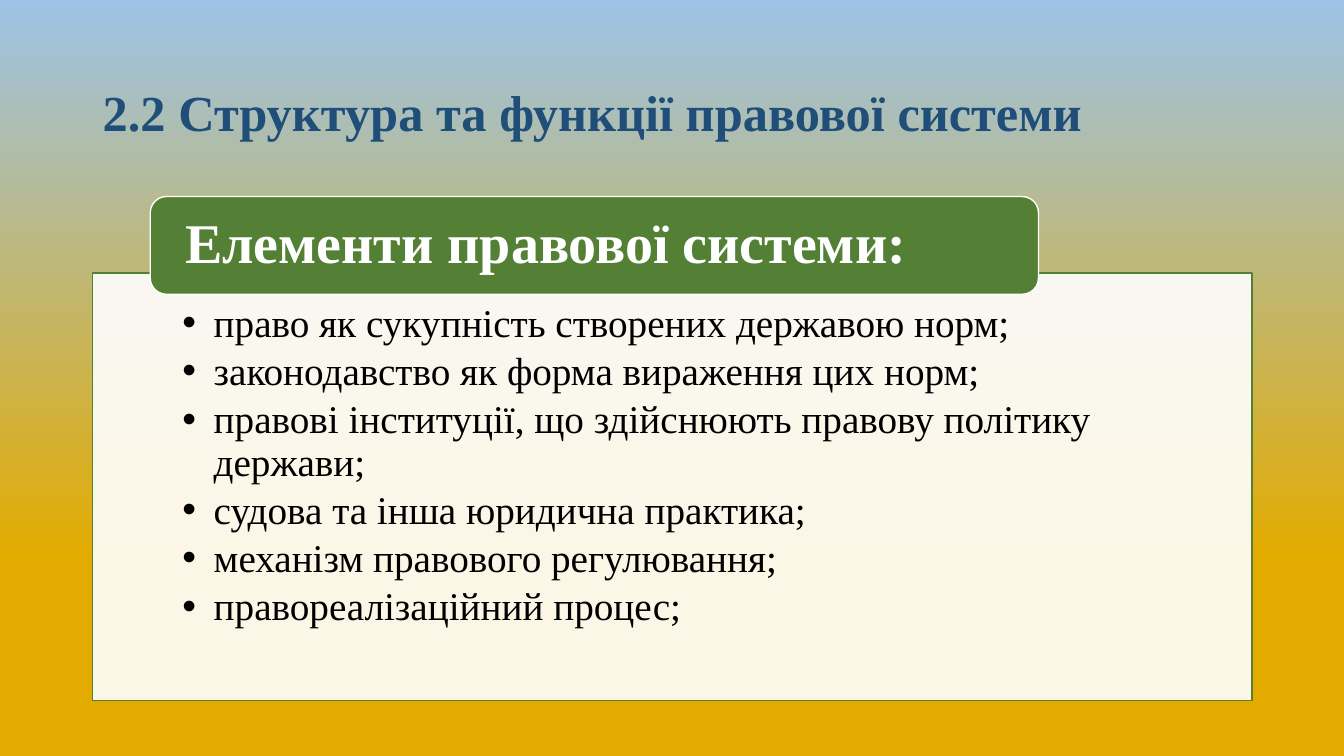
from lxml import etree
from pptx import Presentation
from pptx.dml.color import RGBColor
from pptx.enum.shapes import MSO_SHAPE
from pptx.enum.text import MSO_ANCHOR, PP_ALIGN
from pptx.oxml.ns import qn
from pptx.util import Inches, Pt

RECTANGLE = MSO_SHAPE.RECTANGLE
ROUNDED = MSO_SHAPE.ROUNDED_RECTANGLE
TOP = MSO_ANCHOR.TOP
MIDDLE = MSO_ANCHOR.MIDDLE
LEFT = PP_ALIGN.LEFT

FONT = "Times New Roman"
GREEN = "538035"
WHITE = "FFFFFF"
TITLE = "2.2\u00a0Структура та функції правової системи"
HEADING = "Елементи правової системи:"
ELEMENTS = [
    "право як сукупність створених державою норм;",
    "законодавство як форма вираження цих норм;",
    "правові інституції, що здійснюють правову політику держави;",
    "судова та інша юридична практика;",
    "механізм правового регулювання;",
    "правореалізаційний процес;",
]


def color(value):
    """Turn a hex string into a colour."""
    return RGBColor.from_string(value)


def paint_background(page):
    """Fill the page with gold rising into blue."""
    fill = page.background.fill
    fill.gradient()
    fill.gradient_angle = 90
    stops = [(0.26, "E3AB00"), (1, "9DC3E6")]
    for stop, (position, value) in zip(fill.gradient_stops, stops):
        stop.position = position
        stop.color.rgb = color(value)


def add_panel(page, kind, box, fill, line):
    """Add a flat, outlined shape in the box."""
    panel = page.shapes.add_shape(kind, *map(Inches, box))
    panel.shadow.inherit = False
    panel.fill.solid()
    panel.fill.fore_color.rgb = color(fill)
    panel.line.color.rgb = color(line)
    panel.line.width = Pt(1)
    return panel


def set_frame(shape, insets, anchor):
    """Set wrapping, margins and anchor, and return the text frame."""
    frame = shape.text_frame
    frame.word_wrap = True
    frame.vertical_anchor = anchor
    (frame.margin_left, frame.margin_top,
     frame.margin_right, frame.margin_bottom) = map(Inches, insets)
    return frame


def write(para, text, size, value, bold=False):
    """Write one left-aligned run in the paragraph."""
    para.alignment = LEFT
    para.line_spacing = 0.9
    span = para.add_run()
    span.text = text
    span.font.name = FONT
    span.font.size = Pt(size)
    span.font.bold = bold
    span.font.color.rgb = color(value)


def add_bullet(para, indent):
    """Give the paragraph a hanging round bullet."""
    properties = para._p.get_or_add_pPr()
    properties.set("marL", str(Inches(indent)))
    properties.set("indent", str(-Inches(indent)))
    etree.SubElement(properties, qn("a:buFont"), typeface="Arial")
    etree.SubElement(properties, qn("a:buChar"), char="•")


def add_title(page, box):
    """Place the slide title in the box."""
    title = page.shapes.add_textbox(*map(Inches, box))
    frame = set_frame(title, (0.1, 0.05, 0.1, 0.05), MIDDLE)
    write(frame.paragraphs[0], TITLE, 36, "1F4E79", True)


def add_element_list(page, box):
    """Place the translucent panel with its bulleted list."""
    panel = add_panel(page, RECTANGLE, box, WHITE, GREEN)
    fill_color = panel.fill._xPr.find(qn("a:solidFill"))[0]
    etree.SubElement(fill_color, qn("a:alpha"), val="90000")
    frame = set_frame(panel, (0.89, 0.3, 0.89, 0.22), TOP)
    for index, text in enumerate(ELEMENTS):
        para = frame.add_paragraph() if index else frame.paragraphs[0]
        write(para, text, 28, "000000")
        para.space_after = Pt(4.2)
        add_bullet(para, 0.31)


def add_heading(page, box):
    """Place the green heading bar over the top edge of the list."""
    bar = add_panel(page, ROUNDED, box, GREEN, WHITE)
    frame = set_frame(bar, (0.3, 0, 0.3, 0), MIDDLE)
    write(frame.paragraphs[0], HEADING, 40, WHITE, True)


def main():
    """Build and save the deck."""
    deck = Presentation()
    deck.slide_width, deck.slide_height = Inches(13.33), Inches(7.5)
    page = deck.slides.add_slide(deck.slide_layouts[6])
    paint_background(page)
    add_title(page, (0.92, 0.57, 11.5, 1.15))
    add_element_list(page, (0.92, 2.71, 11.5, 4.24))
    add_heading(page, (1.49, 1.95, 8.81, 0.97))
    deck.save("out.pptx")


if __name__ == "__main__":
    main()
